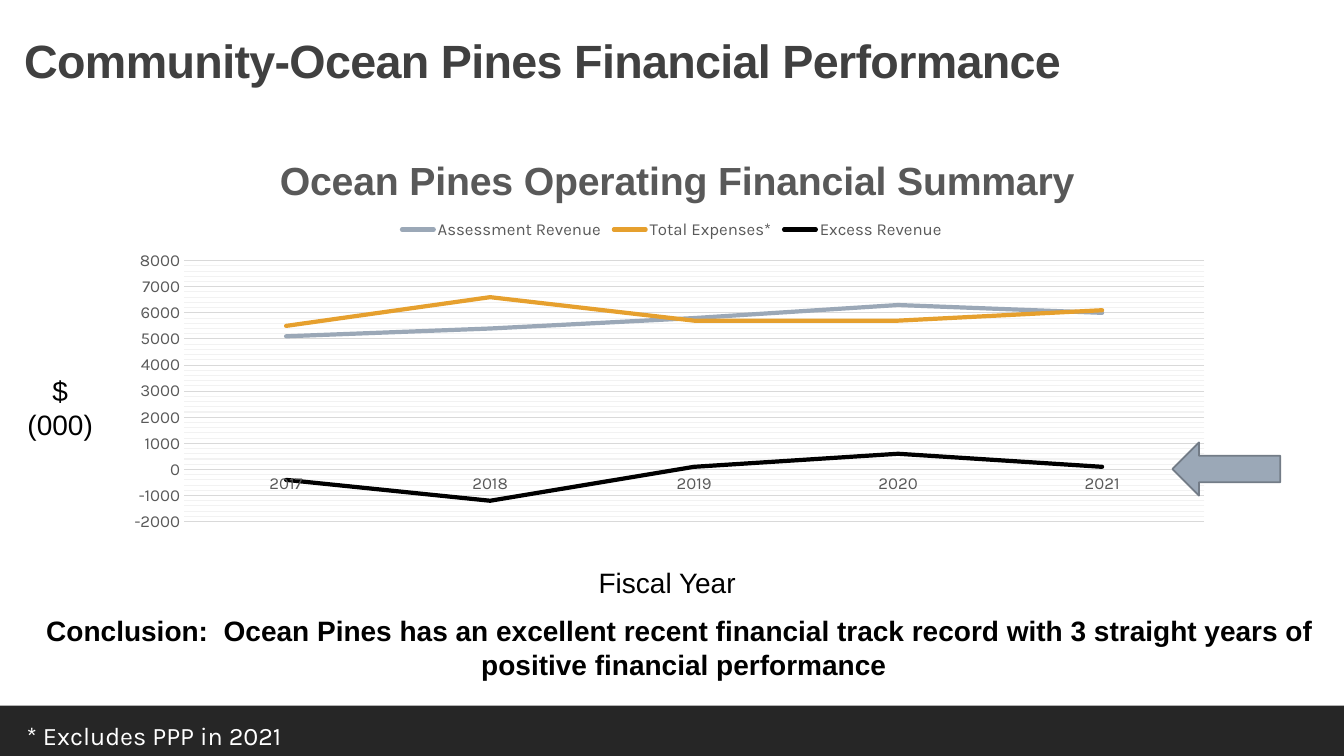
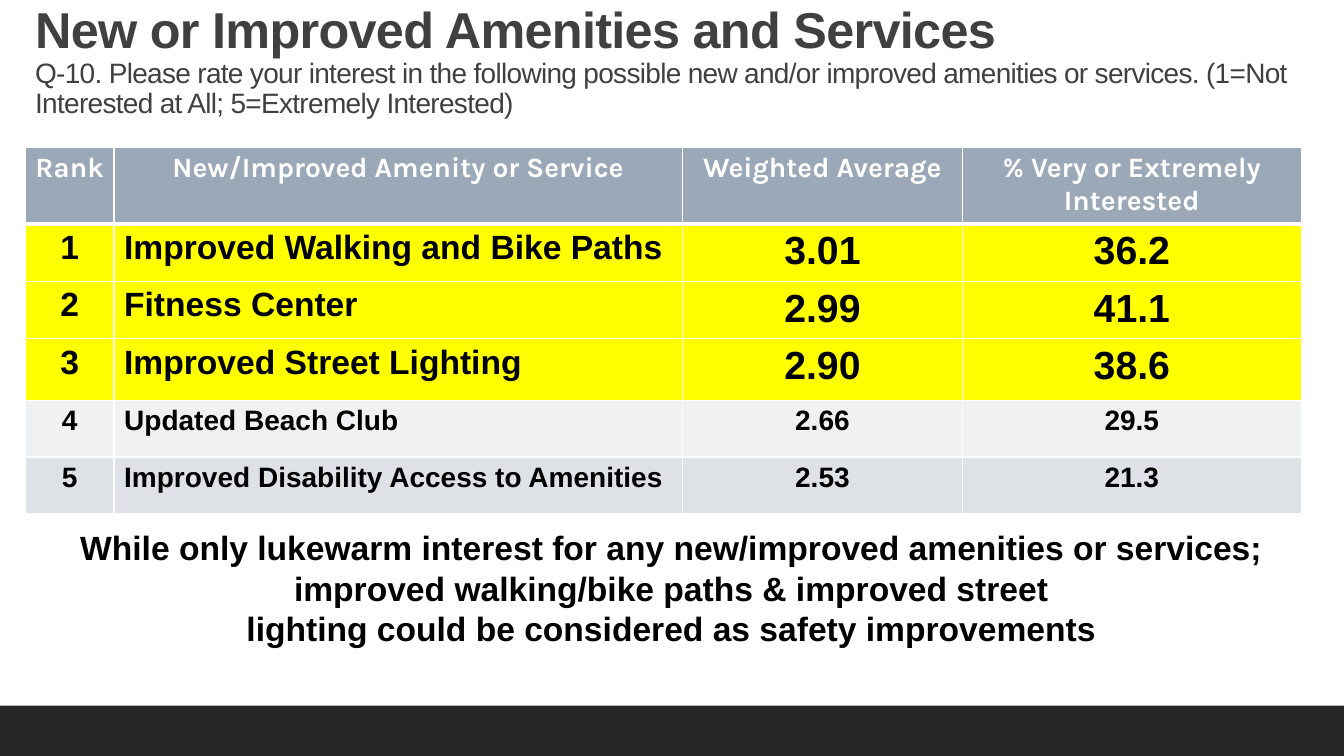
"""Build two slides on community finances and wanted amenities."""
from copy import deepcopy
from lxml import etree
from pptx import Presentation
from pptx.chart.data import CategoryChartData
from pptx.dml.color import RGBColor
from pptx.enum.chart import XL_CHART_TYPE, XL_LEGEND_POSITION, XL_TICK_MARK
from pptx.enum.shapes import MSO_SHAPE
from pptx.enum.text import PP_ALIGN
from pptx.oxml.ns import qn
from pptx.util import Pt

LINE = XL_CHART_TYPE.LINE
TOP = XL_LEGEND_POSITION.TOP
NO_TICK = XL_TICK_MARK.NONE
RECT, ARROW = MSO_SHAPE.RECTANGLE, MSO_SHAPE.LEFT_ARROW
LEFT, MID = PP_ALIGN.LEFT, PP_ALIGN.CENTER

WHITE = RGBColor(0xFF, 0xFF, 0xFF)
BLACK = RGBColor(0, 0, 0)
DARK = RGBColor(0x26, 0x26, 0x26)
TITLE = RGBColor(0x40, 0x40, 0x40)
GREY = RGBColor(0x59, 0x59, 0x59)
GRID = RGBColor(0xD9, 0xD9, 0xD9)
FAINT = RGBColor(0xF2, 0xF2, 0xF2)
SLATE = RGBColor(0x9B, 0xA8, 0xB7)
EDGE = RGBColor(0x73, 0x7C, 0x87)
AMBER = RGBColor(0xE6, 0xA0, 0x2E)
YELLOW = RGBColor(0xFF, 0xFF, 0)
PALE = RGBColor(0xEF, 0xF1, 0xF3)
MIST = RGBColor(0xDE, 0xE1, 0xE6)

WIDE, HIGH, BAND = 960, 540, 36
HEAD = {"bold": True, "color": TITLE, "gap": 0.9, "track": -50}

YEARS = ["2017", "2018", "2019", "2020", "2021"]
SERIES = [
    ("Assessment Revenue", [5100, 5400, 5800, 6300, 6000], SLATE),
    ("Total Expenses*", [5500, 6600, 5700, 5700, 6100], AMBER),
    ("Excess Revenue", [-400, -1200, 100, 600, 100], BLACK),
]
LAYOUT = [
    ("c:title", 1, {"x": 0.14, "y": 0.05}),
    ("c:legend", 1, {"x": 0.25, "y": 0.21, "w": 0.5, "h": 0.07}),
    ("c:plotArea", 0, {"x": 0.06, "y": 0.32, "w": 0.92, "h": 0.63}),
]
NOTES = [
    ((12, 263.5, 62, 55.5), "$\n(000)", {"size": 20, "align": MID}),
    ((420.5, 400.5, 114, 31.5), "Fiscal Year", {"size": 20}),
    ((12, 511, 197, 29), "* Excludes PPP in 2021",
     {"size": 18, "font": "Karla", "color": WHITE}),
    ((17, 435, 943, 55.5),
     "Conclusion:  Ocean Pines has an excellent recent financial track record "
     "with 3 straight years of \npositive financial performance",
     {"size": 20, "bold": True, "align": MID}),
]

QUERY = ("Q-10. Please rate your interest in the following possible new and/or "
         "improved amenities or services. (1=Not Interested at All; "
         "5=Extremely Interested)")
REMARK = ("While only lukewarm interest for any new/improved amenities or services; \n"
          "improved walking/bike paths & improved street \n"
          "lighting could be considered as safety improvements ")
COLS = [63.5, 406, 200, 242]
TABLE = [
    (54, SLATE, 20, 20, ("Rank", "New/Improved Amenity or Service",
                         "Weighted Average", "% Very or Extremely Interested")),
    (40.5, YELLOW, 24, 28, ("1", "Improved Walking and Bike Paths", "3.01", "36.2")),
    (40.5, YELLOW, 24, 28, ("2", "Fitness Center", "2.99", "41.1")),
    (44, YELLOW, 24, 28, ("3", "Improved Street Lighting", "2.90", "38.6")),
    (40.5, PALE, 20, 20, ("4", "Updated Beach Club", "2.66", "29.5")),
    (40.5, MIST, 20, 20, ("5", "Improved Disability Access to Amenities",
                          "2.53", "21.3")),
]


def points(box):
    """Turn a box of numbers into lengths."""
    return [Pt(n) for n in box]


def style(font, size, color=GREY, name="Karla", bold=False):
    """Set the looks of a font."""
    font.size, font.name, font.bold = Pt(size), name, bold
    font.color.rgb = color


def write(frame, text, size, font="Arial", color=BLACK, bold=False,
          align=LEFT, gap=None, track=None):
    """Add one paragraph per line of text to a frame."""
    for line in text.split("\n"):
        para = frame.paragraphs[0] if not frame.text else frame.add_paragraph()
        para.alignment = align
        if gap:
            para.line_spacing = gap
        run = para.add_run()
        run.text = line
        style(run.font, size, color, font, bold)
        if track:
            run._r.get_or_add_rPr().set("spc", str(track))


def room(slide, box, wrap=False):
    """Add an empty text box and return its frame."""
    area = slide.shapes.add_textbox(*points(box)).text_frame
    area.word_wrap = wrap
    return area


def shape(slide, kind, box, fill, edge=None):
    """Add a flat preset shape."""
    item = slide.shapes.add_shape(kind, *points(box))
    item.shadow.inherit = False
    item.fill.solid()
    item.fill.fore_color.rgb = fill
    if edge:
        item.line.color.rgb, item.line.width = edge, Pt(1.25)
    else:
        item.line.fill.background()


def start(deck):
    """Add a slide with the dark foot band."""
    slide = deck.slides.add_slide(deck.slide_layouts[6])
    shape(slide, RECT, (0, HIGH - BAND, WIDE, BAND), DARK)
    return slide


def place(chart, tag, index, spots):
    """Give a part of the chart a fixed place."""
    part = chart.element.xpath(".//" + tag)[0]
    for old in part.findall(qn("c:layout")):
        part.remove(old)
    layout = etree.Element(qn("c:layout"))
    manual = etree.SubElement(layout, qn("c:manualLayout"))
    if tag == "c:plotArea":
        etree.SubElement(manual, qn("c:layoutTarget")).set("val", "inner")
    for key in "xy":
        etree.SubElement(manual, qn(f"c:{key}Mode")).set("val", "edge")
    for key, spot in spots.items():
        etree.SubElement(manual, qn("c:" + key)).set("val", str(spot))
    part.insert(index, layout)


def rule(chart, axis):
    """Draw major grid lines and fainter minor ones."""
    axis.has_major_gridlines = axis.has_minor_gridlines = True
    line = axis.major_gridlines.format.line
    line.color.rgb, line.width = GRID, Pt(0.75)
    faint = deepcopy(chart.element.xpath(".//c:majorGridlines/c:spPr")[0])
    for color in faint.iter(qn("a:srgbClr")):
        color.set("val", str(FAINT))
    chart.element.xpath(".//c:minorGridlines")[0].append(faint)


def draw_chart(slide):
    """Add the line chart of revenue and expenses."""
    data = CategoryChartData()
    data.categories = YEARS
    for name, values, _ in SERIES:
        data.add_series(name, values)
    box = points((84, 91.5, 792, 296))
    chart = slide.shapes.add_chart(LINE, *box, data).chart
    style(chart.font, 10, BLACK)
    write(chart.chart_title.text_frame, "Ocean Pines Operating Financial Summary",
          28, color=GREY, bold=True, align=MID)
    chart.has_legend = True
    chart.legend.position = TOP
    chart.legend.include_in_layout = False
    style(chart.legend.font, 12)

    years, sums = chart.category_axis, chart.value_axis
    for axis in (years, sums):
        axis.major_tick_mark = axis.minor_tick_mark = NO_TICK
        style(axis.tick_labels.font, 12)
    years.format.line.color.rgb = GRID
    years.format.line.width = Pt(0.75)
    sums.format.line.fill.background()
    sums.minimum_scale, sums.maximum_scale = -2000, 8000
    sums.major_unit, sums.minor_unit = 1000, 200
    rule(chart, sums)

    plot = chart.plots[0]
    plot.vary_by_categories = False
    for trace, (_, _, color) in zip(plot.series, SERIES):
        trace.smooth = False
        trace.format.line.color.rgb = color
        trace.format.line.width = Pt(3)
    for line in chart.element.xpath(".//c:ser/c:spPr/a:ln"):
        line.set("cap", "rnd")
    for tag, index, spots in LAYOUT:
        place(chart, tag, index, spots)


def border(cell, top, bottom):
    """Give a cell white borders."""
    props = cell._tc.get_or_add_tcPr()
    for index, (side, width) in enumerate(
            (("L", 1), ("R", 1), ("T", top), ("B", bottom))):
        line = etree.Element(qn("a:ln" + side), w=str(Pt(width)))
        fill = etree.SubElement(line, qn("a:solidFill"))
        etree.SubElement(fill, qn("a:srgbClr")).set("val", str(WHITE))
        props.insert(index, line)


def draw_table(slide):
    """Add the table of ranked amenities."""
    box = points((18, 105, sum(COLS), sum(row[0] for row in TABLE)))
    table = slide.shapes.add_table(len(TABLE), len(COLS), *box).table
    for col, width in zip(table.columns, COLS):
        col.width = Pt(width)
    for r, (height, fill, small, large, texts) in enumerate(TABLE):
        table.rows[r].height = Pt(height)
        look = {"font": "Karla", "color": WHITE} if r == 0 else {}
        for c, text in enumerate(texts):
            cell = table.cell(r, c)
            cell.fill.solid()
            cell.fill.fore_color.rgb = fill
            border(cell, 3 if r == 1 else 1, 3 if r == 0 else 1)
            write(cell.text_frame, text, small if c < 2 else large, bold=True,
                  align=LEFT if r and c == 1 else MID, **look)


def main():
    """Build and save the deck."""
    deck = Presentation()
    deck.slide_width, deck.slide_height = Pt(WIDE), Pt(HIGH)

    slide = start(deck)
    write(room(slide, (-8.5, 24, 792, 59), True),
          "Community-Ocean Pines Financial Performance", 33.3, align=MID, **HEAD)
    draw_chart(slide)
    for box, text, look in NOTES:
        write(room(slide, box), text, **look)
    shape(slide, ARROW, (837.5, 316, 77, 38), SLATE, EDGE)

    slide = start(deck)
    head = room(slide, (18, 0, 924.5, 114.5), True)
    write(head, "New or Improved Amenities and Services", 36, **HEAD)
    write(head, QUERY, 20, **{**HEAD, "bold": False})
    write(room(slide, (46, 373, 873.5, 94.5)), REMARK, 24, bold=True, align=MID)
    draw_table(slide)

    deck.save("out.pptx")


if __name__ == "__main__":
    main()
